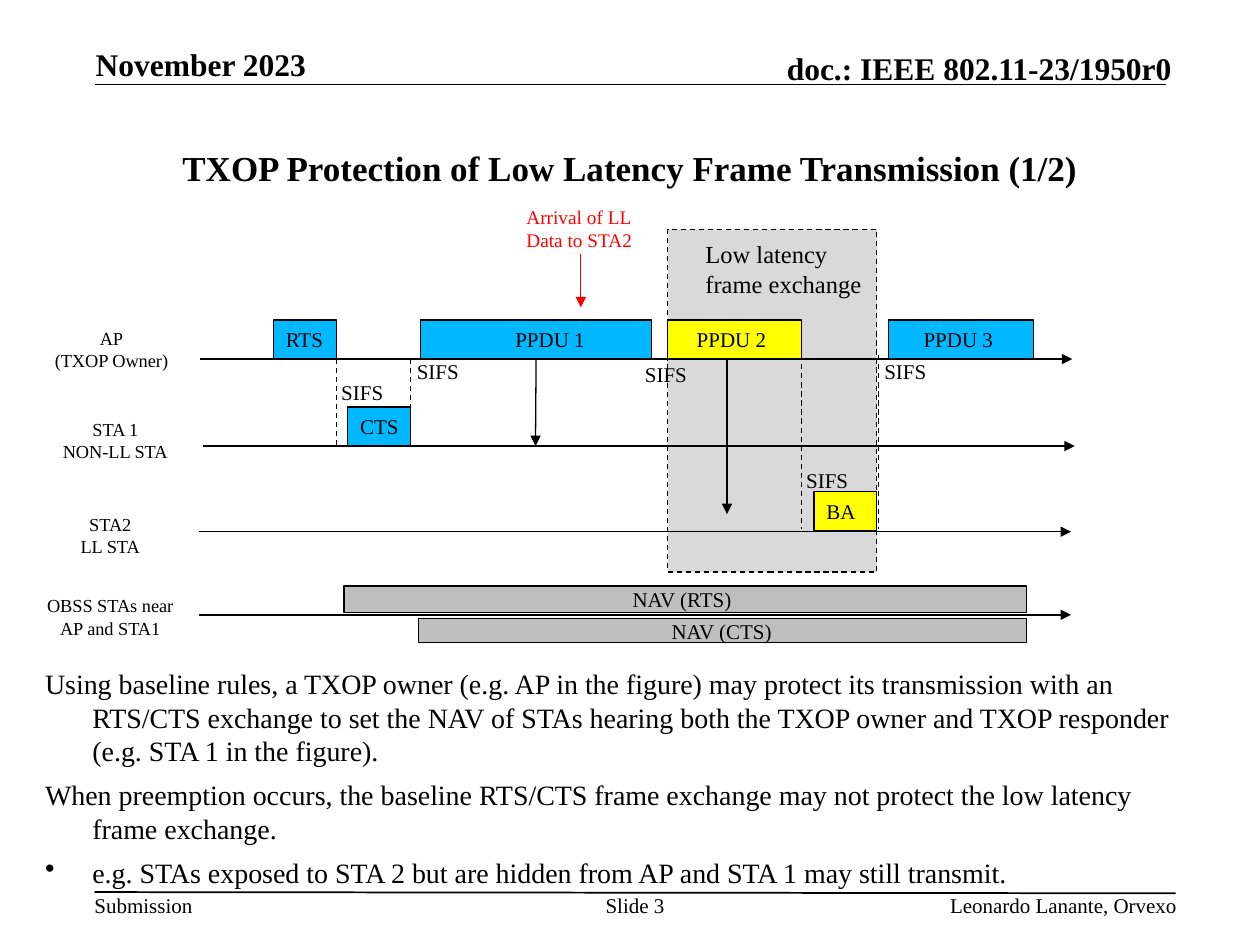
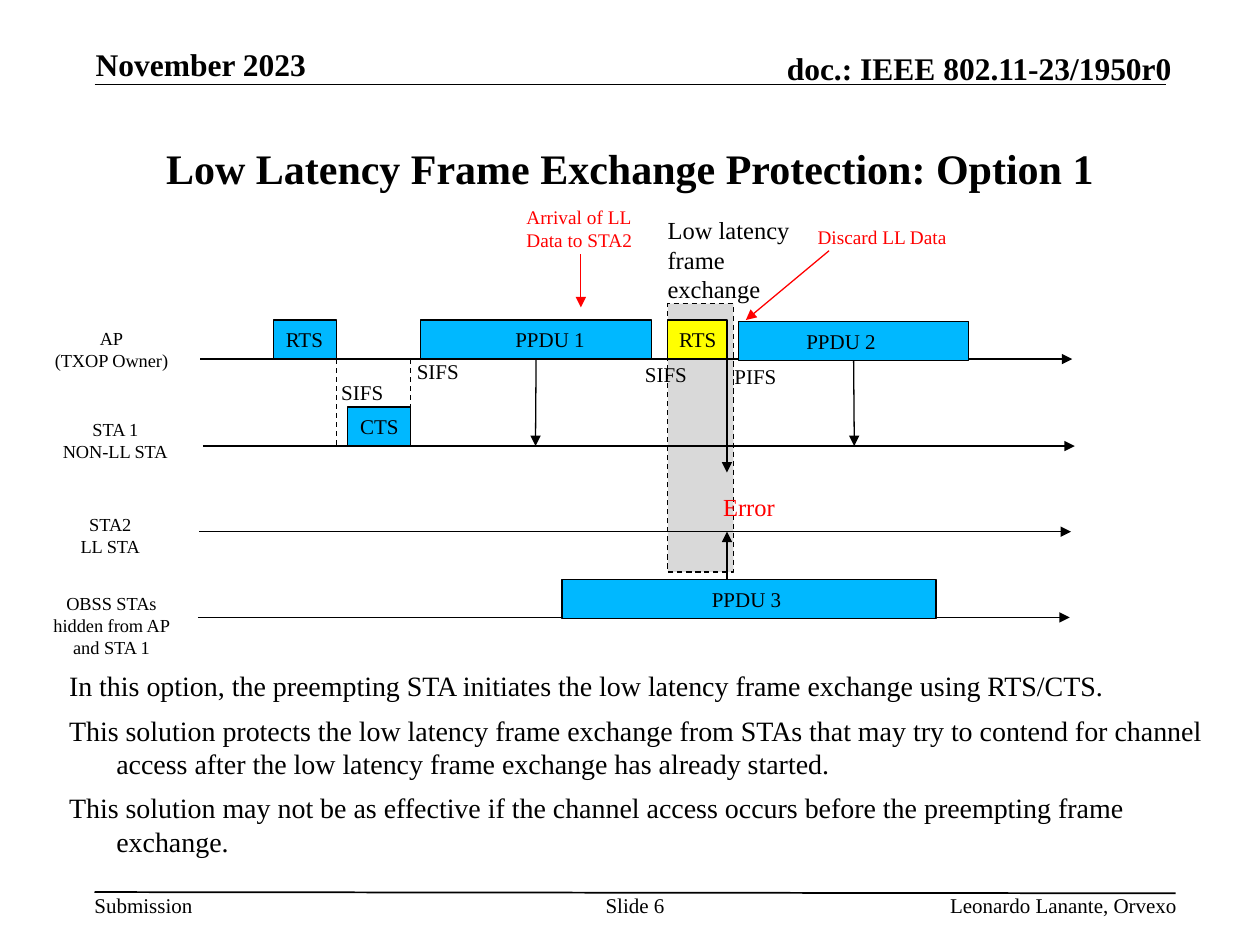
from lxml.etree import SubElement
from pptx import Presentation
from pptx.dml.color import RGBColor
from pptx.enum.dml import MSO_LINE
from pptx.enum.shapes import MSO_CONNECTOR, MSO_SHAPE
from pptx.enum.text import MSO_ANCHOR, PP_ALIGN
from pptx.oxml.ns import qn
from pptx.util import Inches, Pt

# Every place and length is counted in square grid cells.
COLUMNS, ROWS = 100, 75
CELL = Inches(10) // COLUMNS

FONT = "Times New Roman"
BLACK = RGBColor(0x00, 0x00, 0x00)
RED = RGBColor(0xFF, 0x00, 0x00)
BLUE = RGBColor(0x00, 0xB8, 0xFF)
YELLOW = RGBColor(0xFF, 0xFF, 0x00)
NAV_GRAY = RGBColor(0xBF, 0xBF, 0xBF)
SHADE_GRAY = RGBColor(0xD9, 0xD9, 0xD9)

MARGIN = 7.5
BLOCK_HEIGHT = 3.1
AP_ROW, STA1_ROW, STA2_ROW = 28.5, 35.4, 42.2
AXIS_LENGTH = 69.2
BOTTOM, TOP = 2, 0


def cells(*counts):
    return [round(count * CELL) for count in counts]


def write(frame, lines, size, color=BLACK, bold=False, align=PP_ALIGN.LEFT,
          anchor=MSO_ANCHOR.TOP, insets=(1, 0.5, 1, 0.5)):
    """Fill a text frame with one paragraph per line; insets run left, top, right, bottom."""
    frame.word_wrap = True
    frame.vertical_anchor = anchor
    (frame.margin_left, frame.margin_top,
     frame.margin_right, frame.margin_bottom) = cells(*insets)
    frame.text = "\n".join(lines)
    for para in frame.paragraphs:
        para.alignment = align
        para.font.name = FONT
        para.font.size = Pt(size)
        para.font.bold = bold
        para.font.color.rgb = color


def add_text(page, place, text, size, **style):
    box = page.shapes.add_textbox(*cells(*place))
    write(box.text_frame, text.split("\n"), size, **style)
    return box


def add_rectangle(page, place, fill, dash=None):
    box = page.shapes.add_shape(MSO_SHAPE.RECTANGLE, *cells(*place))
    box.shadow.inherit = False
    box.fill.solid()
    box.fill.fore_color.rgb = fill
    box.line.color.rgb = BLACK
    box.line.width = Pt(0.75)
    box.line.dash_style = dash
    return box


def add_block(page, left, top, width, label, indent, fill=BLUE, height=BLOCK_HEIGHT):
    """A frame on the timeline, its label indented from the left side."""
    box = add_rectangle(page, (left, top, width, height), fill)
    write(box.text_frame, [label], 12, anchor=MSO_ANCHOR.MIDDLE, insets=(indent, 0, 0, 0))
    return box


def add_line(page, start, end, color=BLACK, width=0.75, dash=None, arrow=False):
    line = page.shapes.add_connector(MSO_CONNECTOR.STRAIGHT, *cells(*start, *end))
    line.line.color.rgb = color
    line.line.width = Pt(width)
    line.line.dash_style = dash
    if arrow:
        SubElement(line.line._get_or_add_ln(), qn("a:tailEnd"), type="triangle")
    SubElement(line._element.spPr, qn("a:effectLst"))
    return line


def add_arrow(page, start, end, color=BLACK):
    return add_line(page, start, end, color, arrow=True)


def add_guide(page, column, top, bottom):
    add_line(page, (column, top), (column, bottom), dash=MSO_LINE.DASH)


def add_delivery(page, block, column):
    """Arrow from the bottom of an AP block down to the STA 1 axis."""
    arrow = add_arrow(page, (column, AP_ROW), (column, STA1_ROW))
    arrow.begin_connect(block, BOTTOM)


def add_gap(page, left, top, name="SIFS"):
    add_text(page, (left, top, 7.5, 3), name, 12)


def add_station(page, axis_left, row, name, name_left, name_top):
    add_arrow(page, (axis_left, row), (axis_left + AXIS_LENGTH, row))
    add_text(page, (name_left, name_top, 12.5, 4.5), name, 10.5, align=PP_ALIGN.CENTER)


def add_body(page, place, lines, bulleted=()):
    """Hanging paragraphs; those whose numbers are in bulleted get a bullet."""
    box = add_text(page, place, "\n".join(lines), 16)
    hang = cells(3.75)[0]
    for number, para in enumerate(box.text_frame.paragraphs):
        para.space_before = Pt(6)
        properties = para._p.get_or_add_pPr()
        properties.set("marL", str(hang))
        properties.set("indent", str(-hang))
        if number in bulleted:
            SubElement(properties, qn("a:buChar"), char="•")


def add_page(deck, number, title, title_size):
    """A page with the header, title and footer that all pages share."""
    page = deck.slides.add_slide(deck.slide_layouts[6])
    flush = {"insets": (0, 0, 0, 0)}
    header = {"bold": True, "anchor": MSO_ANCHOR.BOTTOM, **flush}
    add_line(page, (MARGIN, 6.7), (COLUMNS - MARGIN, 6.7), width=1)
    add_line(page, (MARGIN, 70.8), (93.3, 70.9), width=1)
    add_text(page, (7.6, 3.6, 20.5, 3), "November 2023", 18, **header)
    add_text(page, (54.7, 3.9, 38.3, 3), "doc.: IEEE 802.11-23/1950r0", 18,
             align=PP_ALIGN.RIGHT, **header)
    add_text(page, (MARGIN, 70.8, 10, 2), "Submission", 12, **flush)
    add_text(page, (47.5, 70.8, 5.8, 4), f"Slide {number}", 12,
             align=PP_ALIGN.CENTER, **flush)
    add_text(page, (58.6, 70.8, 34.8, 2), "Leonardo Lanante, Orvexo", 12,
             align=PP_ALIGN.RIGHT, **flush)
    add_text(page, (MARGIN, 7.5, COLUMNS - 2 * MARGIN, 11.6), title, title_size,
             bold=True, align=PP_ALIGN.CENTER, anchor=MSO_ANCHOR.MIDDLE)
    return page


def add_timeline(page, shade_top, shade_width):
    """The exchange up to the arrival of low latency data, over the shaded period."""
    add_rectangle(page, (53, shade_top, shade_width, 45.4 - shade_top),
                  SHADE_GRAY, MSO_LINE.DASH)
    add_station(page, 15.9, AP_ROW, "AP\n(TXOP Owner)", 2.6, 25.5)
    add_station(page, 16.1, STA1_ROW, "STA 1\nNON-LL STA", 2.9, 32.7)
    add_station(page, 15.8, STA2_ROW, "STA2\nLL STA", 2.5, 40.2)
    add_block(page, 21.7, 25.4, 5, "RTS", 1)
    add_block(page, 27.6, 32.3, 5, "CTS", 1)
    first_ppdu = add_block(page, 33.4, 25.4, 18.3, "PPDU 1", 7.5)
    add_delivery(page, first_ppdu, 42.5)
    for column in (26.7, 32.6):
        add_guide(page, column, AP_ROW, STA1_ROW)
    for left, top in ((26.1, 29.6), (32.1, 28), (50.2, 28.2)):
        add_gap(page, left, top)
    add_text(page, (40.8, 15.8, 13.3, 4.7), "Arrival of LL Data to STA2", 11, color=RED)
    add_arrow(page, (46.1, 20.2), (46.1, 24.4), RED)


def add_protection_page(deck):
    page = add_page(deck, 3, "TXOP Protection of Low Latency Frame Transmission (1/2)", 20)
    add_timeline(page, shade_top=18.2, shade_width=16.6)
    add_station(page, 15.8, 48.8, "OBSS STAs near AP and STA1", 2.5, 46.7)
    add_block(page, 27.3, 46.5, 54.2, "NAV (RTS)", 22.9, NAV_GRAY, 2.1)
    add_block(page, 33.2, 49.1, 48.3, "NAV (CTS)", 20.1, NAV_GRAY, 1.9)
    add_block(page, 53, 25.4, 10.6, "PPDU 2", 2.3, YELLOW)
    add_block(page, 64.6, 39, 5, "BA", 1, YELLOW)
    add_block(page, 70.5, 25.4, 11.5, "PPDU 3", 2.8)
    add_arrow(page, (57.7, AP_ROW), (57.7, 40.8))
    for column in (63.6, 69.7):
        add_guide(page, column, 28.2, 42)
    add_gap(page, 63, 36.6)
    add_gap(page, 69.2, 28)
    add_text(page, (55, 18.5, 15.1, 5.7), "Low latency frame exchange", 14)
    add_body(page, (2.6, 52.4, 93.3, 18.9), [
        "Using baseline rules, a TXOP owner (e.g. AP in the figure) may protect its "
        "transmission with an RTS/CTS exchange to set the NAV of STAs hearing both the "
        "TXOP owner and TXOP responder (e.g. STA 1 in the figure).",
        "When preemption occurs, the baseline RTS/CTS frame exchange may not protect "
        "the low latency frame exchange.",
        "e.g. STAs exposed to STA 2 but are hidden from AP and STA 1 may still transmit.",
    ], bulleted=(2,))


def add_option_page(deck):
    page = add_page(deck, 6, "Low Latency Frame Exchange Protection: Option 1", 24)
    add_timeline(page, shade_top=24.1, shade_width=5.2)
    add_station(page, 15.7, 49, "OBSS STAs hidden from AP and STA 1", 2.6, 46.5)
    add_block(page, 53, 25.4, 4.7, "RTS", 0.9, YELLOW)
    second_ppdu = add_block(page, 58.6, 25.5, 18.3, "PPDU 2", 5.4)
    add_block(page, 44.6, 46, 29.7, "PPDU 3", 11.9)
    add_delivery(page, second_ppdu, 67.8)
    add_arrow(page, (57.7, AP_ROW), (57.7, 37.5))
    add_arrow(page, (57.7, 46), (57.7, STA2_ROW))
    add_gap(page, 57.3, 28.4, "PIFS")
    add_text(page, (52, 16.6, 11.9, 8.1), "Low latency frame exchange", 14)
    add_text(page, (56.4, 38.6, 15.1, 3.4), "Error", 14, color=RED)
    add_text(page, (63.9, 17.4, 13.3, 2.9), "Discard LL Data", 11, color=RED)
    add_arrow(page, (65.8, 19.9), (59.2, 25.4), RED)
    add_body(page, (4.5, 52.6, 93.3, 17.5), [
        "In this option, the preempting STA initiates the low latency frame exchange "
        "using RTS/CTS.",
        "This solution protects the low latency frame exchange from STAs that may try "
        "to contend for channel access after the low latency frame exchange has already "
        "started.",
        "This solution may not be as effective if the channel access occurs before the "
        "preempting frame exchange.",
    ])


def main():
    deck = Presentation()
    deck.slide_width, deck.slide_height = cells(COLUMNS, ROWS)
    add_protection_page(deck)
    add_option_page(deck)
    deck.save("out.pptx")


if __name__ == "__main__":
    main()
